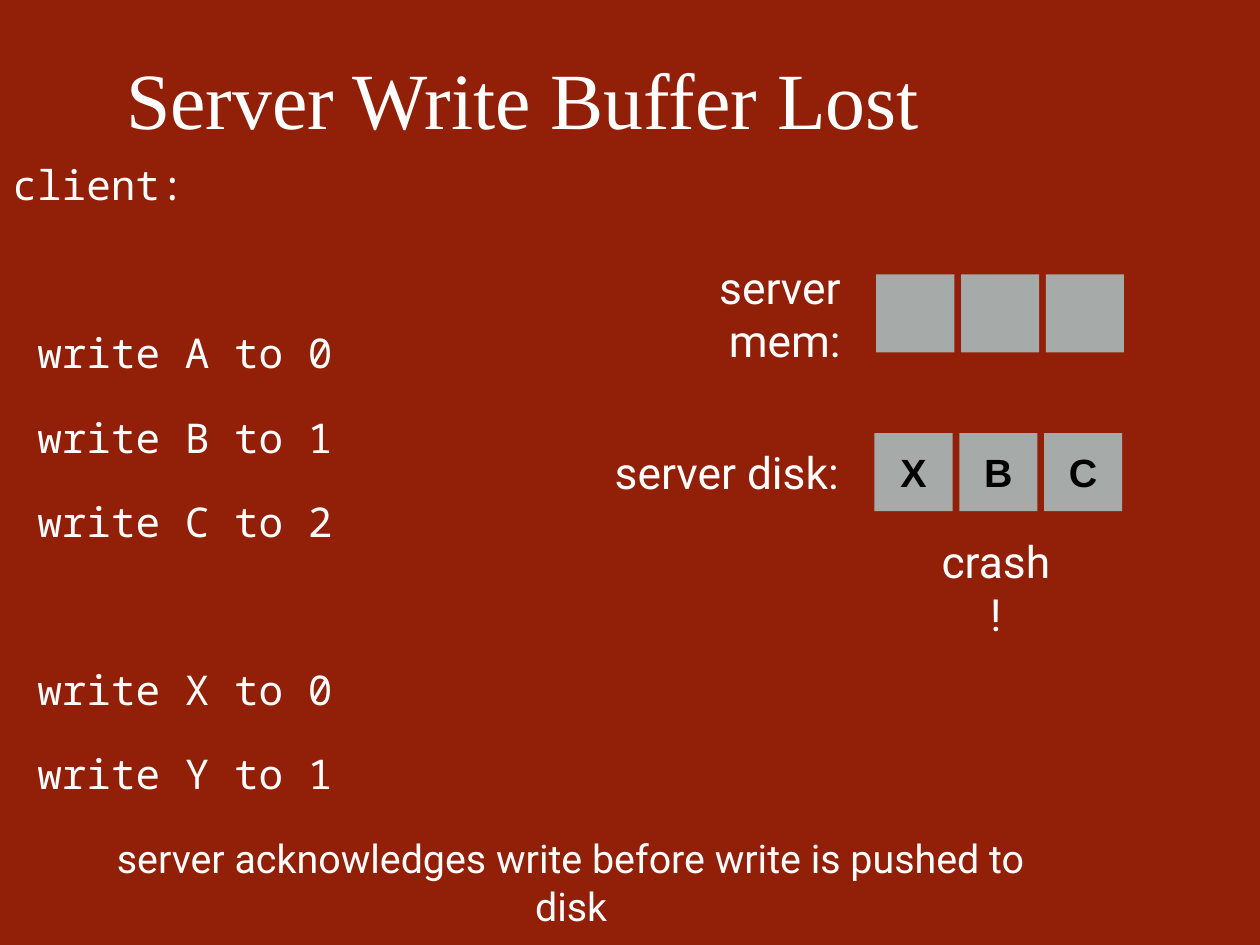
from pptx import Presentation
from pptx.dml.color import RGBColor
from pptx.enum.shapes import MSO_SHAPE
from pptx.enum.text import MSO_ANCHOR, MSO_AUTO_SIZE, PP_ALIGN
from pptx.util import Cm, Pt

BACKGROUND = RGBColor(0x92, 0x1F, 0x07)
BLOCK_GREY = RGBColor(0xA6, 0xAA, 0xA8)
WHITE = RGBColor(0xFF, 0xFF, 0xFF)
BLACK = RGBColor(0x00, 0x00, 0x00)

BLOCK_SIZE = 2.24
BLOCK_PITCH = 2.43
LABEL_HEIGHT = 1.8
LABEL_GAP = 0.38

LINE_HEIGHT = 40
LINE_GAP = 28.4
GROUP_GAP = LINE_HEIGHT + 2 * LINE_GAP
COMMAND_GROUPS = [
    ["write A to 0", "write B to 1", "write C to 2"],
    ["write X to 0", "write Y to 1"],
]


def format_paragraph(para, font, size, color=WHITE, align=PP_ALIGN.CENTER, bold=False):
    para.alignment = align
    for span in para.runs:
        span.font.name = font
        span.font.size = Pt(size)
        span.font.bold = bold
        span.font.color.rgb = color


def set_frame(frame, margins, anchor=MSO_ANCHOR.MIDDLE):
    """Wrap the text and set its margins (left, top, right, bottom) in cm."""
    frame.word_wrap = True
    frame.auto_size = MSO_AUTO_SIZE.NONE
    frame.vertical_anchor = anchor
    (frame.margin_left, frame.margin_top,
     frame.margin_right, frame.margin_bottom) = map(Cm, margins)


def add_title(slide, text, left, top, width, height):
    title = slide.shapes.title
    title.left, title.top, title.width, title.height = map(Cm, (left, top, width, height))
    title.text_frame.text = text
    set_frame(title.text_frame, (0.36, 0.18, 0.36, 0.18))
    format_paragraph(title.text_frame.paragraphs[0], "Times New Roman", 64.8)


def add_caption(slide, text, left, top, width, height, size=36,
                align=PP_ALIGN.CENTER, margins=(0.15, 0.15, 0.15, 0.15)):
    box = slide.shapes.add_textbox(*map(Cm, (left, top, width, height)))
    box.text_frame.text = text
    set_frame(box.text_frame, margins)
    format_paragraph(box.text_frame.paragraphs[0], "Roboto", size, align=align)


def add_block(slide, letter, left, top):
    block = slide.shapes.add_shape(
        MSO_SHAPE.RECTANGLE, Cm(left), Cm(top), Cm(BLOCK_SIZE), Cm(BLOCK_SIZE))
    block.shadow.inherit = False
    block.fill.solid()
    block.fill.fore_color.rgb = BLOCK_GREY
    block.line.fill.background()
    if letter:
        block.text_frame.text = letter
        set_frame(block.text_frame, (0, 0, 0, 0))
        format_paragraph(block.text_frame.paragraphs[0], "Arial", 32, BLACK, bold=True)


def add_storage_row(slide, label, letters, left, top, label_width):
    """Place a label and, to its right, one block per letter."""
    add_caption(slide, label, left, top + (BLOCK_SIZE - LABEL_HEIGHT) / 2,
                label_width, LABEL_HEIGHT, align=PP_ALIGN.RIGHT,
                margins=(0.15, 0.15, 0.64, 0.15))
    blocks_left = left + label_width + LABEL_GAP
    for column, letter in enumerate(letters):
        add_block(slide, letter, blocks_left + column * BLOCK_PITCH, top)


def add_client_code(slide, heading, groups, left, top, width, height):
    box = slide.shapes.add_textbox(*map(Cm, (left, top, width, height)))
    frame = box.text_frame
    set_frame(frame, (0.36, 0.18, 0.36, 0.18), MSO_ANCHOR.TOP)
    frame.text = heading
    for group in groups:
        for index, command in enumerate(group):
            para = frame.add_paragraph()
            para.text = command
            para.space_before = Pt(LINE_GAP if index else GROUP_GAP)
            para._p.get_or_add_pPr().set("marL", str(Cm(0.71)))
    for para in frame.paragraphs:
        para.line_spacing = Pt(LINE_HEIGHT)
        format_paragraph(para, "Noto Sans Mono", 33.3, align=PP_ALIGN.LEFT)


def add_write_buffer_slide(deck):
    slide = deck.slides.add_slide(deck.slide_layouts[5])
    slide.background.fill.solid()
    slide.background.fill.fore_color.rgb = BACKGROUND
    add_title(slide, "Server Write Buffer Lost", 0, 0.25, 29.97, 5.08)
    add_storage_row(slide, "server mem:", ["", "", ""], 17.02, 7.87, 7.72)
    add_storage_row(slide, "server disk:", ["X", "B", "C"], 17.45, 12.42, 7.24)
    add_caption(slide, "crash!", 26.87, 15.93, 3.5, 1.83,
                margins=(0.08, 0.15, 0.22, 0.15))
    add_client_code(slide, "client:", COMMAND_GROUPS, 0, 4.4, 14.1, 16.9)
    add_caption(slide, "server acknowledges write before write is pushed to disk",
                3.23, 24.46, 27.56, 1.65, size=32, margins=(0, 0.15, 1.27, 0.15))


def main():
    deck = Presentation()
    deck.slide_width, deck.slide_height = Cm(36.12), Cm(27.1)
    add_write_buffer_slide(deck)
    deck.save("out.pptx")


if __name__ == "__main__":
    main()
